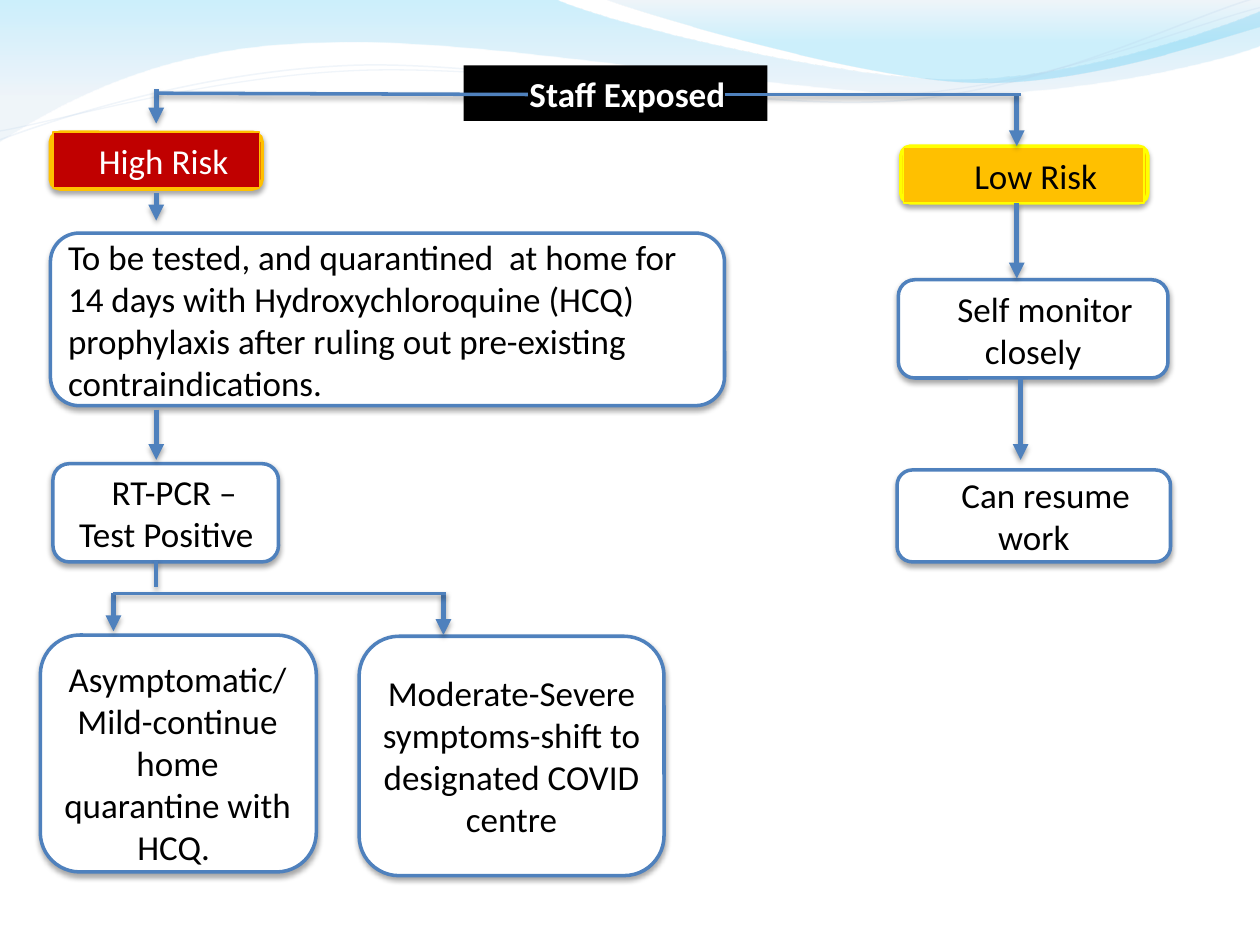
from lxml import etree
from pptx import Presentation
from pptx import util as u
from pptx.dml.color import RGBColor
from pptx.enum import shapes, text
from pptx.oxml.ns import qn

# The slide is a grid of 100 columns by 75 rows; every length counts cells.
COLUMNS, ROWS = 100, 75
CELL = u.Inches(0.1)
FONT, SIZE = "Calibri", 20
SPACE = 0.63  # width of one space at the text size
COLORS = {
    "black": "000000", "white": "FFFFFF", "blue": "4F81BD", "red": "C00000",
    "amber": "FFC000", "yellow": "FFFF00", "sky": "00B0F0", "mist": "B7CDE7",
}

# Background waves: start point, then lines (2 numbers) and curves (6 numbers)
WAVES = [
    {"start": (0, -0.1), "stops": [("sky", 0), ("mist", 0.7)], "steps": [
        (44, -0.1), (47.6, 1.7, 66.4, 6.3, 75.8, 6.3),
        (85.3, 6.3, 95.8, 2.6, 100, 0.9), (100.1, 3.6),
        (98.3, 4.4, 87, 7.6, 74.6, 7.5), (62.2, 7.5, 38.2, 2.8, 25.7, 3.4),
        (12.9, 3.5, 4.6, 8.3, -0.1, 11.3), (0, -0.1)]},
    {"start": (47.9, -0.1), "stops": [("mist", 0), ("sky", 0.53)], "steps": [
        (50.9, 1.1, 68.2, 6.2, 76.9, 6.5), (85.6, 6.9, 96.1, 3.2, 100, 2.1),
        (100, 0), (47.9, -0.1)]},
    {"start": (0, 11.1), "width": 0.85, "steps": [
        (4.8, 9.3, 15.8, 5.7, 27.7, 5.2), (39.5, 4.7, 59.3, 8.9, 71.3, 8),
        (83.3, 7.1, 93.8, 1.5, 99.8, -0.2)]},
    {"start": (0, 10.4), "width": 0.75, "steps": [
        (4.7, 9.6, 16.4, 6.1, 28.3, 5.6), (40.3, 5.1, 59.7, 8.3, 71.7, 7.5),
        (83.6, 6.7, 94.1, 2.1, 100, 0.6)]},
]

# Title bar, then cards: frame place, label place, paragraphs, style
TITLE = ((36.8, 5.2, 24.1, 4.4), "Staff Exposed")
CARDS = [
    ((4, 18.5, 53.5, 13.7), (4.9, 18.1, 51.8, 14.5),
     ["To be tested, and quarantined  at home for 14 days with Hydroxychloroquine "
      "(HCQ) prophylaxis after ruling out pre-existing contraindications."],
     {"align": "LEFT"}),
    ((71.3, 22.2, 21.4, 7.8), (71.7, 22.3, 20.6, 7.7), ["Self monitor closely"],
     {"spaces": 3}),
    ((71.2, 37.3, 21.7, 7.3), (71.4, 36.3, 21.3, 9.2), ["Can resume work"],
     {"spaces": 3}),
    ((4, 10.5, 16.8, 4.5), (4.2, 10.5, 16.4, 4.4), ["High Risk"],
     {"fill": "red", "line": "amber", "ink": "white", "align": "LEFT", "spaces": 5}),
    ((71.5, 11.6, 19.6, 4.5), (71.7, 11.7, 19.1, 4.4), ["Low Risk"],
     {"fill": "amber", "line": "yellow", "spaces": 3}),
    ((4.2, 36.8, 17.9, 7.8), (4.6, 36.8, 17.2, 7.7), ["RT-PCR –", "Test Positive"],
     {"spaces": 2}),
    ((28.5, 50.5, 24.2, 19), (29.3, 52.7, 22.6, 14.5),
     ["Moderate-Severe symptoms-shift to designated COVID centre"], {}),
    ((3.2, 50.4, 21.9, 18.8), (4.1, 51.6, 20, 17.8),
     ["Asymptomatic/", "Mild-continue home quarantine with HCQ. "], {}),
]

# Arrows by lane: column, then start and end rows
HIGH_LANE, LOW_LANE, RESUME_LANE, MILD_LANE, SEVERE_LANE = 12.4, 80.7, 81, 9, 35.2
ARROWS = [
    (HIGH_LANE, 7.1, 9.8), (LOW_LANE, 7.5, 11.6), (HIGH_LANE, 15.3, 17.5),
    (SEVERE_LANE, 47.1, 50.4), (HIGH_LANE, 32.5, 36.5), (LOW_LANE, 16.1, 22.1),
    (RESUME_LANE, 30, 36.5), (MILD_LANE, 47.1, 50.1),
]
BRANCHES = [
    (12.6, 7.4, 41.9, 7.5), (HIGH_LANE, 44.5, HIGH_LANE, 46.6),
    (MILD_LANE, 47.1, 35.4, 47.1), (57.5, 7.5, RESUME_LANE, 7.5),
]


def cells(*counts):
    return [u.Emu(round(count * CELL)) for count in counts]


def color(name):
    return RGBColor.from_string(COLORS[name])


def add_shadow(effects):
    shadow = etree.SubElement(effects, qn("a:outerShdw"), blurRad=str(u.Pt(3)),
                              dist=str(u.Pt(1.8)), dir="5400000", rotWithShape="0")
    black = etree.SubElement(shadow, qn("a:srgbClr"), val=COLORS["black"])
    etree.SubElement(black, qn("a:alpha"), val="35000")


def add_wave(page, start, steps, stops=None, width=None):
    builder = page.shapes.build_freeform(*cells(*start), scale=1.0)
    builder.add_line_segments([cells(*step[-2:]) for step in steps], close=bool(stops))
    wave = builder.convert_to_shape()
    # Bend the straight segments that have control points
    for segment, step in zip(list(wave.element.iter(qn("a:lnTo"))), steps):
        if len(step) == 6:
            curve = etree.Element(qn("a:cubicBezTo"))
            for x, y in zip(cells(*step[::2]), cells(*step[1::2])):
                etree.SubElement(curve, qn("a:pt"), x=str(x - wave.left),
                                 y=str(y - wave.top))
            segment.getparent().replace(segment, curve)
    wave.shadow.inherit = False
    if stops:
        wave.fill.gradient()
        wave.fill.gradient_angle = 270
        for stop, (name, position) in zip(wave.fill.gradient_stops, stops):
            stop.color.rgb = color(name)
            stop.position = position
        wave.line.fill.background()
    else:
        wave.fill.background()
        wave.line.color.rgb = color("mist")
        wave.line.width = u.Pt(width)
    for tint in wave.element.spPr.iter(qn("a:srgbClr")):
        etree.SubElement(tint, qn("a:alpha"), val="20000")


def add_panel(parent, kind, place, fill, line=None, width=0):
    panel = parent.shapes.add_shape(kind, *cells(*place))
    panel.shadow.inherit = False
    panel.fill.solid()
    panel.fill.fore_color.rgb = color(fill)
    if line:
        panel.line.color.rgb = color(line)
        panel.line.width = u.Pt(width)
    else:
        panel.line.fill.background()
    return panel


def write(box, lines, ink="black", bold=False, align="CENTER", spaces=0):
    frame = box.text_frame
    frame.text = "\n".join(lines)
    frame.word_wrap = True
    frame.vertical_anchor = text.MSO_ANCHOR.MIDDLE
    frame.margin_left = frame.margin_right = cells(0.5)[0]
    frame.margin_top = frame.margin_bottom = cells(0.5)[0]
    for para in frame.paragraphs:
        para.alignment = text.PP_ALIGN[align]
        for span in para.runs:
            span.font.name, span.font.size = FONT, u.Pt(SIZE)
            span.font.bold = bold
            span.font.color.rgb = color(ink)
    if spaces:
        first = next(box.element.iter(qn("a:pPr")))
        first.set("indent", str(cells(spaces * SPACE)[0]))


def add_card(page, place, label_place, lines, fill="white", line="blue", **style):
    card = page.shapes.add_group_shape()
    panel = add_panel(card, shapes.MSO_SHAPE.ROUNDED_RECTANGLE, place, fill, line, 2)
    add_shadow(panel.element.spPr.find(qn("a:effectLst")))
    if fill == "white":
        label = card.shapes.add_textbox(*cells(*label_place))
    else:
        label = add_panel(card, shapes.MSO_SHAPE.RECTANGLE, label_place, fill, line, 1)
    write(label, lines, **style)


def add_line(page, ends, width, arrow=False):
    line = page.shapes.add_connector(shapes.MSO_CONNECTOR.STRAIGHT, *cells(*ends))
    line.line.color.rgb = color("blue")
    line.line.width = u.Pt(width)
    properties = line.element.spPr
    if arrow:
        etree.SubElement(properties.find(qn("a:ln")), qn("a:tailEnd"), type="triangle")
    add_shadow(etree.SubElement(properties, qn("a:effectLst")))


def main():
    deck = Presentation()
    deck.slide_width, deck.slide_height = cells(COLUMNS, ROWS)
    page = deck.slides.add_slide(deck.slide_layouts[6])
    for wave in WAVES:
        add_wave(page, **wave)
    place, title = TITLE
    bar = add_panel(page, shapes.MSO_SHAPE.RECTANGLE, place, "black")
    write(bar, [title], ink="white", bold=True, spaces=3)
    for place, label_place, lines, style in CARDS:
        add_card(page, place, label_place, lines, **style)
    for lane, top, bottom in ARROWS:
        add_line(page, (lane, top, lane, bottom), 3, arrow=True)
    for ends in BRANCHES:
        add_line(page, ends, 2)
    deck.save("out.pptx")


if __name__ == "__main__":
    main()
